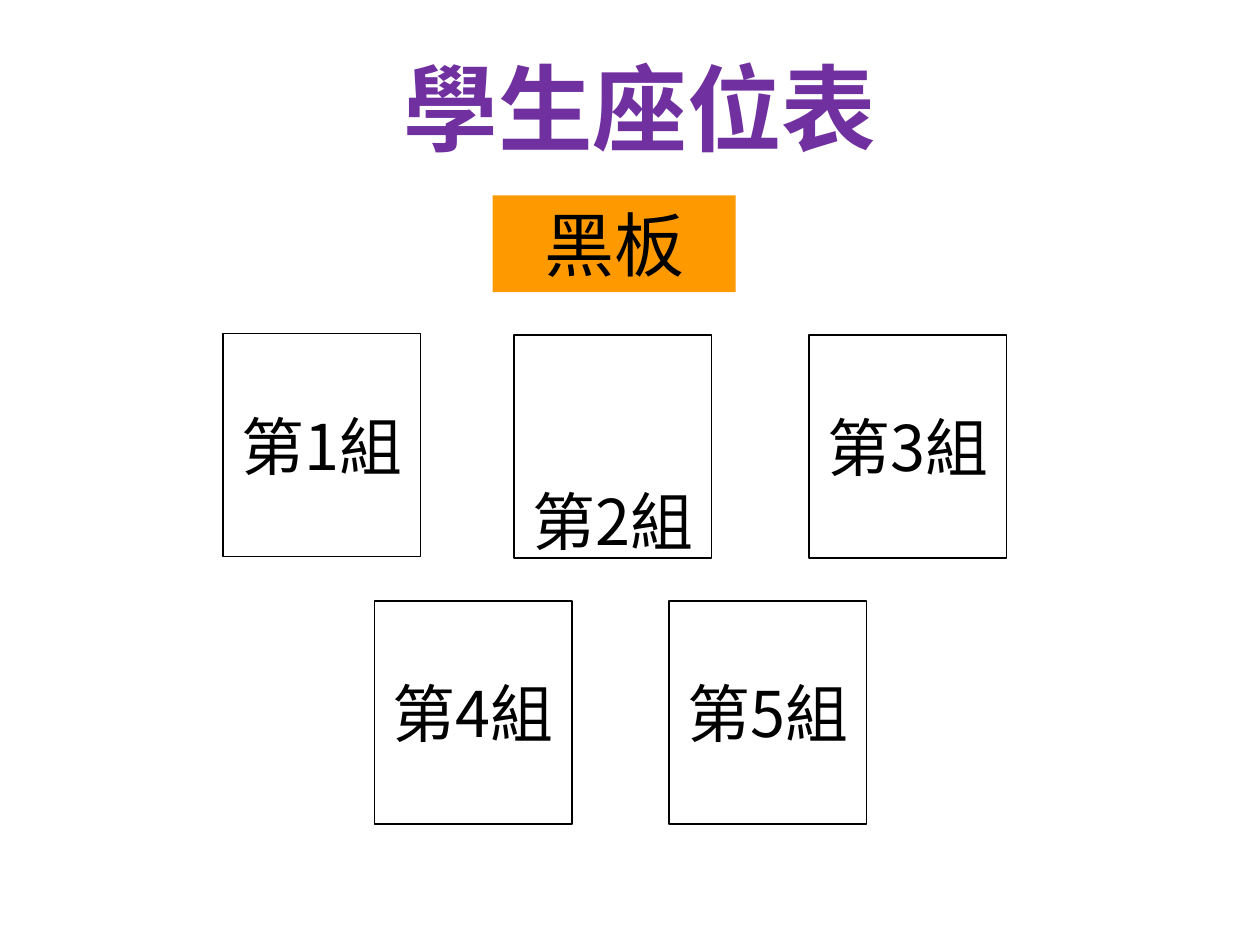
"""Build a one-slide seating chart of five student groups."""
from typing import NamedTuple, Optional

from lxml.etree import SubElement
from pptx import Presentation
from pptx.dml.color import RGBColor
from pptx.enum.shapes import MSO_SHAPE
from pptx.enum.text import MSO_ANCHOR, MSO_AUTO_SIZE, PP_ALIGN
from pptx.oxml.ns import qn
from pptx.util import Inches, Pt

FONT = "Noto Sans CJK SC"
BLACK = RGBColor(0x00, 0x00, 0x00)
ORANGE = RGBColor(0xFF, 0x99, 0x00)
PURPLE = RGBColor(0x70, 0x30, 0xA0)
SEAT_WIDTH, SEAT_HEIGHT = 1.57, 1.77


class Box(NamedTuple):
    """A labelled rectangle, in inches and points."""
    text: str
    left: float
    top: float
    width: float = SEAT_WIDTH
    height: float = SEAT_HEIGHT
    size: int = 36
    fill: Optional[RGBColor] = None
    anchor: MSO_ANCHOR = MSO_ANCHOR.MIDDLE


BOXES = [
    Box("黑板", 3.91, 1.55, 1.93, 0.77, 40, ORANGE, MSO_ANCHOR.TOP),
    Box("第1組", 1.77, 2.65),
    Box("第2組", 4.08, 2.66, anchor=MSO_ANCHOR.BOTTOM),
    Box("第3組", 6.42, 2.66),
    Box("第4組", 2.97, 4.77),
    Box("第5組", 5.31, 4.77),
]


def write(shape, text: str, size: int, color: RGBColor, bold: bool = False) -> None:
    """Put one centred line of styled text in a shape."""
    shape.text_frame.text = text
    line = shape.text_frame.paragraphs[0]
    line.alignment = PP_ALIGN.CENTER
    font = line.font
    font.name, font.size, font.bold = FONT, Pt(size), bold
    font.color.rgb = color
    style = line._p.pPr.find(qn("a:defRPr"))
    SubElement(style, qn("a:ea")).set("typeface", FONT)


def draw_box(slide, box: Box) -> None:
    """Draw a filled board or an outlined seat group."""
    place = [Inches(n) for n in (box.left, box.top, box.width, box.height)]
    shape = slide.shapes.add_shape(MSO_SHAPE.RECTANGLE, *place)
    shape.shadow.inherit = False
    if box.fill is None:
        shape.fill.background()
        shape.line.color.rgb = BLACK
        shape.line.width = Pt(0.75)
    else:
        shape.fill.solid()
        shape.fill.fore_color.rgb = box.fill
        shape.line.fill.background()
    frame = shape.text_frame
    frame.word_wrap = True
    frame.vertical_anchor = box.anchor
    if box.anchor == MSO_ANCHOR.BOTTOM:
        frame.margin_bottom = 0
    write(shape, box.text, box.size, BLACK)


def draw_title(slide, text: str) -> None:
    """Place and style the slide title."""
    title = slide.shapes.title
    title.left, title.top = Inches(0.83), Inches(0.3)
    title.width, title.height = Inches(8.5), Inches(1.09)
    title.text_frame.auto_size = MSO_AUTO_SIZE.NONE
    title.text_frame.vertical_anchor = MSO_ANCHOR.MIDDLE
    write(title, text, 54, PURPLE, bold=True)


def main() -> None:
    """Build and save the slide."""
    deck = Presentation()
    deck.slide_width, deck.slide_height = Inches(10), Inches(7.5)
    slide = deck.slides.add_slide(deck.slide_layouts[5])
    draw_title(slide, "學生座位表")
    for box in BOXES:
        draw_box(slide, box)
    deck.save("out.pptx")


if __name__ == "__main__":
    main()
